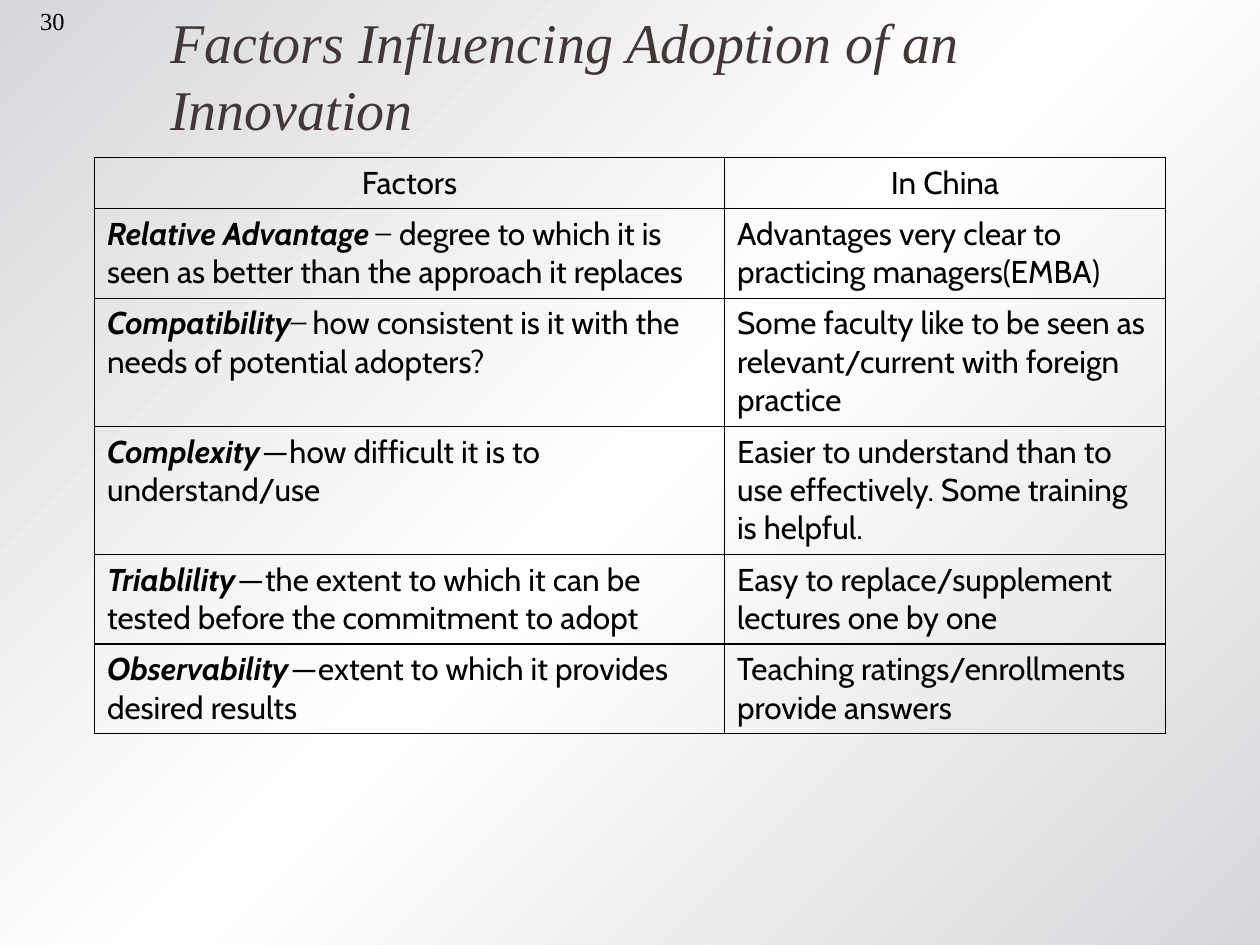
from copy import deepcopy
from dataclasses import dataclass

from lxml import etree
from pptx import Presentation
from pptx.dml.color import RGBColor
from pptx.enum import text
from pptx.oxml import ns
from pptx.util import Pt


@dataclass(frozen=True)
class Theme:
    edge: str = "D8D8DC"
    middle: str = "FFFFFF"
    title: str = "433838"
    ink: str = "000000"
    serif: str = "Times New Roman"
    sans: str = "Cabin"
    title_size: int = 32
    body_size: int = 18
    number_size: int = 14
    border: float = 0.75
    line_height: int = 22
    cell_padding: float = 7.2


class Deck:
    def __init__(self, theme):
        self.theme = theme
        self.prs = Presentation()
        self.prs.slide_width, self.prs.slide_height = Pt(720), Pt(540)
        self.s = None

    def add_slide(self):
        self.s = self.prs.slides.add_slide(self.prs.slide_layouts[5])

    def style(self, r, size, color, font, bold=False, italic=False):
        f = r.font
        f.size, f.name, f.bold, f.italic = Pt(size), font, bold, italic
        f.color.rgb = RGBColor.from_string(color)

    def background(self):
        """Diagonal gradient, light in the middle and darker at both corners."""
        fill = self.s.background.fill
        fill.gradient()
        fill.gradient_angle = 315
        first = next(self.s.background._cSld.iter(ns.qn("a:gs")))
        first.addnext(deepcopy(first))
        t = self.theme
        for stop, position, color in zip(
            fill.gradient_stops, (0, 0.5, 1), (t.edge, t.middle, t.edge)
        ):
            stop.position = position
            stop.color.rgb = RGBColor.from_string(color)

    def title(self, words, x, y, w, h):
        sp = self.s.shapes.title
        sp.left, sp.top, sp.width, sp.height = Pt(x), Pt(y), Pt(w), Pt(h)
        tf = sp.text_frame
        tf.text = words
        tf.auto_size = text.MSO_AUTO_SIZE.NONE
        tf.vertical_anchor = text.MSO_ANCHOR.MIDDLE
        p = tf.paragraphs[0]
        p.alignment = text.PP_ALIGN.LEFT
        t = self.theme
        self.style(p.runs[0], t.title_size, t.title, t.serif, italic=True)

    def number(self, words, x, y, w, h):
        tf = self.s.shapes.add_textbox(Pt(x), Pt(y), Pt(w), Pt(h)).text_frame
        tf.word_wrap = True
        tf.text = words
        p = tf.paragraphs[0]
        p.alignment = text.PP_ALIGN.CENTER
        t = self.theme
        self.style(p.runs[0], t.number_size, t.ink, t.serif)

    def borders(self, cell):
        tcPr = cell._tc.get_or_add_tcPr()
        for i, side in enumerate(("lnL", "lnR", "lnT", "lnB")):
            ln = etree.Element(ns.qn(f"a:{side}"), w=str(Pt(self.theme.border)))
            fill = etree.SubElement(ln, ns.qn("a:solidFill"))
            etree.SubElement(fill, ns.qn("a:srgbClr"), val=self.theme.ink)
            tcPr.insert(i, ln)

    def cell(self, cell, runs, centered):
        """Fill a cell from (words, kind) runs; kind is plain, term or serif."""
        t = self.theme
        cell.fill.background()
        self.borders(cell)
        p = cell.text_frame.paragraphs[0]
        p.alignment = text.PP_ALIGN.CENTER if centered else text.PP_ALIGN.LEFT
        for words, kind in runs:
            r = p.add_run()
            r.text = words
            term = kind == "term"
            font = t.serif if kind == "serif" else t.sans
            self.style(r, t.body_size, t.ink, font, bold=term, italic=term)

    def table(self, rows, x, y, widths):
        """Rows are (line count, cells); the first row is a centred header."""
        t = self.theme
        heights = [n * t.line_height + t.cell_padding for n, _ in rows]
        tbl = self.s.shapes.add_table(
            len(rows), len(widths), Pt(x), Pt(y), Pt(sum(widths)), Pt(sum(heights))
        ).table
        tbl.first_row = tbl.horz_banding = False
        for column, width in zip(tbl.columns, widths):
            column.width = Pt(width)
        for i, (_, cells) in enumerate(rows):
            tbl.rows[i].height = Pt(heights[i])
            for j, runs in enumerate(cells):
                self.cell(tbl.cell(i, j), runs, centered=i == 0)


def plain(words):
    return [(words, "plain")]


def factor(term, *rest):
    return [(term, "term"), *rest]


ROWS = [
    (1, (plain("Factors"), plain("In China"))),
    (2, (factor("Relative Advantage  ", ("̶  ", "serif"),
                ("degree to which it is seen as better than the approach it replaces", "plain")),
         plain("Advantages very clear to practicing managers(EMBA)"))),
    (3, (factor("Compatibility ", ("̶", "serif"),
                ("  how consistent is it with the needs of potential adopters?", "plain")),
         plain("Some faculty like to be seen as relevant/current with foreign practice"))),
    (3, (factor("Complexity", ("  ̶  how difficult it is to understand/use", "plain")),
         plain("Easier to understand than to use effectively. Some training is helpful."))),
    (2, (factor("Triablility",
                ("  ̶  the extent to which it can be tested before the commitment to adopt", "plain")),
         plain("Easy to replace/supplement lectures one by one"))),
    (2, (factor("Observability", ("  ̶  extent to which it provides desired results", "plain")),
         plain("Teaching ratings/enrollments provide answers"))),
]


def main():
    deck = Deck(Theme())
    deck.add_slide()
    deck.background()
    deck.title("Factors Influencing Adoption of an Innovation", 90, 7.2, 576, 70.6)
    deck.table(ROWS, 54, 90, (360, 252))
    deck.number("30", 0, 0, 60, 36)
    deck.prs.save("out.pptx")


if __name__ == "__main__":
    main()
